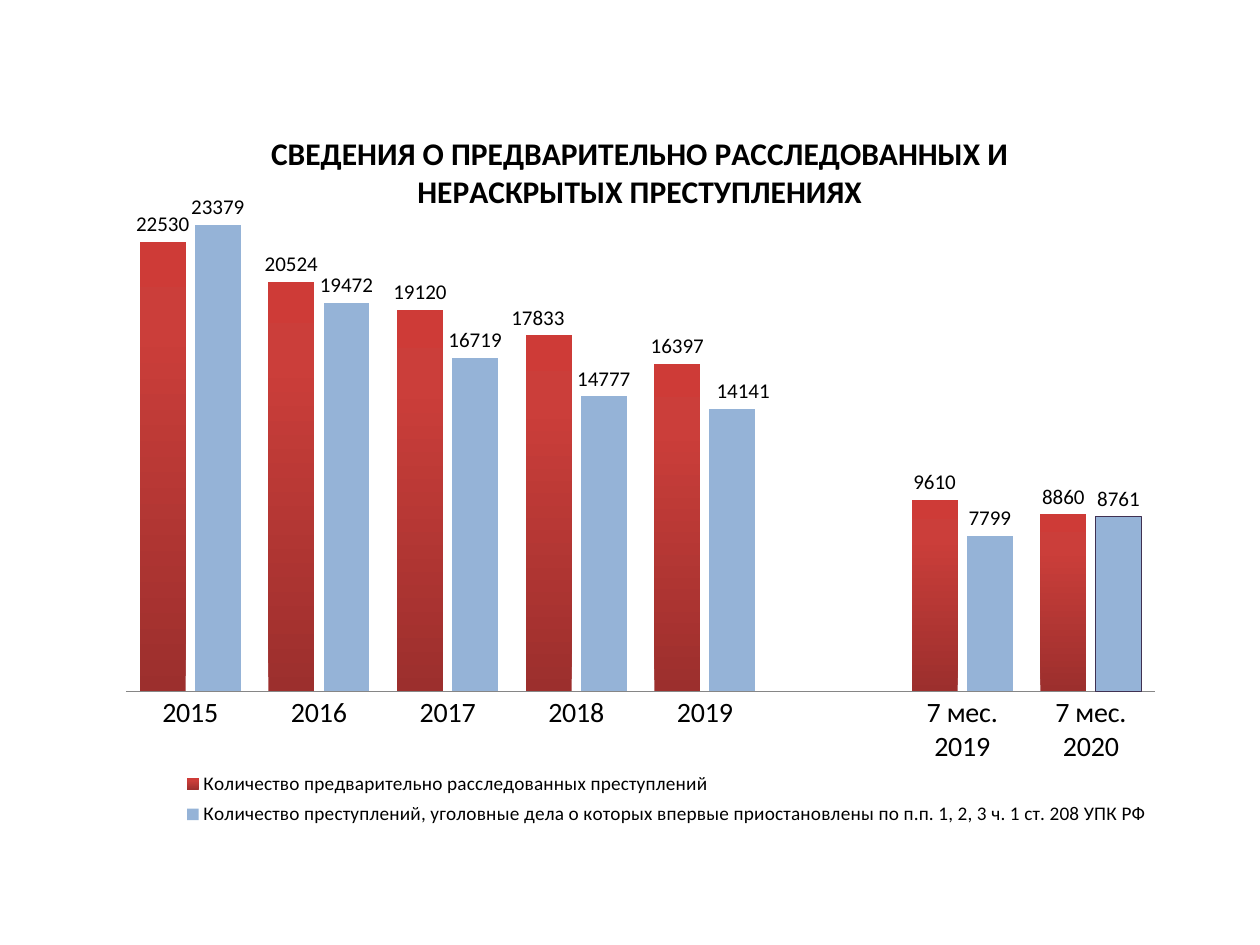
from lxml import etree
from pptx import Presentation
from pptx.chart.data import CategoryChartData
from pptx.dml.color import RGBColor
from pptx.enum.chart import (XL_CHART_TYPE, XL_LABEL_POSITION,
                             XL_LEGEND_POSITION, XL_TICK_MARK)
from pptx.oxml import parse_xml
from pptx.oxml.ns import nsdecls, qn
from pptx.util import Inches, Pt

CLUSTERED = XL_CHART_TYPE.COLUMN_CLUSTERED
OUTSIDE = XL_LABEL_POSITION.OUTSIDE_END
BOTTOM = XL_LEGEND_POSITION.BOTTOM
NO_TICK = XL_TICK_MARK.NONE

FONT = "Calibri"
BLACK = RGBColor(0x00, 0x00, 0x00)
BLUE = RGBColor(0x95, 0xB3, 0xD7)
PURPLE = RGBColor(0x40, 0x31, 0x52)
GREY = RGBColor(0x86, 0x86, 0x86)
RED_STOPS = [(0, "9C2F2D"), (80, "CB3E3A"), (100, "CE3B37")]
RED_ANGLE = 270

TITLE = "СВЕДЕНИЯ О ПРЕДВАРИТЕЛЬНО РАССЛЕДОВАННЫХ И НЕРАСКРЫТЫХ ПРЕСТУПЛЕНИЯХ"
PERIODS = ["2015", "2016", "2017", "2018", "2019", "", "7 мес. 2019", "7 мес. 2020"]
INVESTIGATED = ("Количество предварительно расследованных преступлений",
                [22530, 20524, 19120, 17833, 16397, None, 9610, 8860])
SUSPENDED = ("Количество преступлений, уголовные дела о которых впервые "
             "приостановлены по п.п. 1, 2, 3 ч. 1 ст. 208 УПК РФ",
             [23379, 19472, 16719, 14777, 14141, None, 7799, 8761])
# Label shifts as shares of the chart: (series, point) -> (x, y)
LABEL_SHIFTS = {(0, 3): (-0.01, 0), (1, 4): (0.01, 0)}


def style_font(font, size, bold=False):
    font.name, font.size, font.bold = FONT, Pt(size), bold
    font.color.rgb = BLACK


def write_text(frame, text, size, bold=False):
    run = frame.paragraphs[0].add_run()
    run.text = text
    style_font(run.font, size, bold)


def place(element, after=None, inner=False, **shares):
    """Give a chart part a manual layout, put after the named child or first."""
    for old in element.findall(qn("c:layout")):
        element.remove(old)
    layout = etree.Element(qn("c:layout"))
    manual = etree.SubElement(layout, qn("c:manualLayout"))
    settings = [("layoutTarget", "inner")] if inner else []
    if "w" in shares or after != "c:idx":
        settings += [("xMode", "edge"), ("yMode", "edge")]
    for tag, value in settings + list(shares.items()):
        etree.SubElement(manual, qn("c:" + tag)).set("val", str(value))
    if after:
        element.find(qn(after)).addnext(layout)
    else:
        element.insert(0, layout)


def fill_gradient(fmt, stops, angle):
    fmt.fill.background()
    stop_xml = "".join(f'<a:gs pos="{pos * 1000}"><a:srgbClr val="{color}"/></a:gs>'
                       for pos, color in stops)
    gradient = parse_xml(f'<a:gradFill {nsdecls("a")} rotWithShape="1">'
                         f'<a:gsLst>{stop_xml}</a:gsLst>'
                         f'<a:lin ang="{angle * 60000}" scaled="0"/></a:gradFill>')
    return gradient


prs = Presentation()
prs.slide_width, prs.slide_height = Inches(10), Inches(7.5)
slide = prs.slides.add_slide(prs.slide_layouts[6])

crime_data = CategoryChartData()
crime_data.categories = PERIODS
for name, counts in (INVESTIGATED, SUSPENDED):
    crime_data.add_series(name, counts)
chart = slide.shapes.add_chart(CLUSTERED, Inches(0.83), Inches(0.76),
                               Inches(8.51), Inches(5.91), crime_data).chart
style_font(chart.font, 18)

chart.has_title = True
write_text(chart.chart_title.text_frame, TITLE, 18, bold=True)
chart.chart_title.include_in_layout = False
place(chart.chart_title._element, after="c:tx", x=0.15, y=0.04)

chart.has_legend = True
chart.legend.position = BOTTOM
chart.legend.include_in_layout = False
style_font(chart.legend.font, 11)
place(chart.legend._element, after="c:legendPos", x=0.06, y=0.9, w=0.93, h=0.09)

periods_axis, counts_axis = chart.category_axis, chart.value_axis
periods_axis.major_tick_mark = periods_axis.minor_tick_mark = NO_TICK
periods_axis.format.line.color.rgb = GREY
style_font(periods_axis.tick_labels.font, 16)
counts_axis.minimum_scale, counts_axis.maximum_scale = 0, 25000
counts_axis.has_major_gridlines = False
counts_axis.visible = False

plot = chart.plots[0]
plot.gap_width, plot.overlap, plot.vary_by_categories = 60, -20, False
place(chart._chartSpace.chart.plotArea, inner=True, x=0.02, y=0.13, w=0.96, h=0.67)

investigated, suspended = plot.series
for series in plot.series:
    series.invert_if_negative = False
    labels = series.data_labels
    labels.show_value, labels.position = True, OUTSIDE
    style_font(labels.font, 12)

gradient = fill_gradient(investigated.format, RED_STOPS, RED_ANGLE)
red_properties = investigated._element.find(qn("c:spPr"))
red_properties.replace(red_properties.find(qn("a:noFill")), gradient)
suspended.format.fill.solid()
suspended.format.fill.fore_color.rgb = BLUE

latest = suspended.points[len(PERIODS) - 1].format
latest.fill.solid()
latest.fill.fore_color.rgb = BLUE
latest.line.color.rgb = PURPLE
latest.line.width = Pt(0.75)

for (series_index, point_index), (x, y) in LABEL_SHIFTS.items():
    series = plot.series[series_index]
    label = series.points[point_index].data_label
    label.position = OUTSIDE
    style_font(label.font, 12)
    for shifted in series._element.iter(qn("c:dLbl")):
        if shifted.find(qn("c:idx")).get("val") == str(point_index):
            place(shifted, after="c:idx", x=x, y=y)

prs.save("out.pptx")
